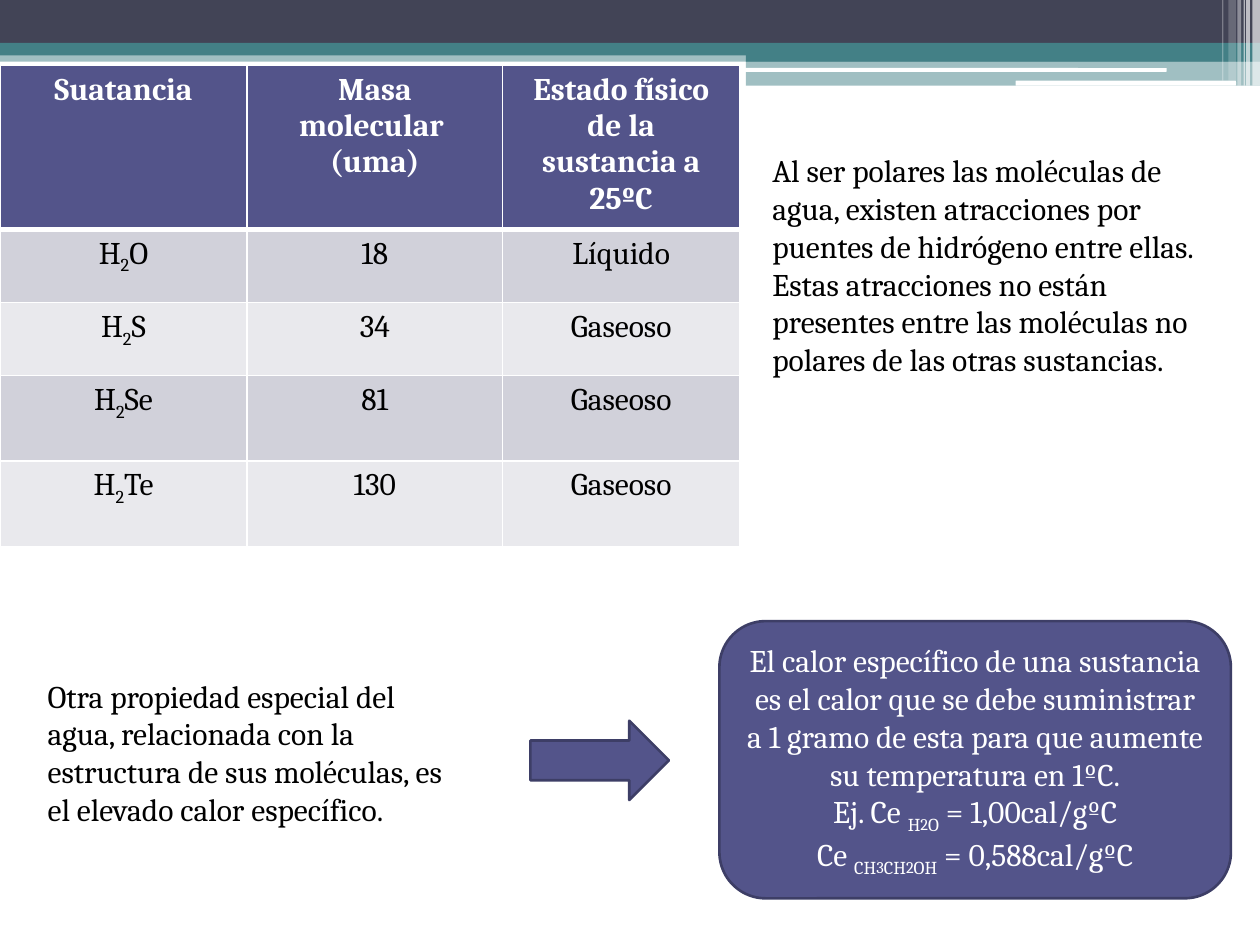
import itertools
import pptx
import pptx.dml.color
import pptx.enum.shapes
import pptx.enum.text
import pptx.oxml
import pptx.oxml.ns
import pptx.util
from pptx.util import Inches

SHAPES = pptx.enum.shapes.MSO_SHAPE
ALIGN = pptx.enum.text.PP_ALIGN
ANCHOR = pptx.enum.text.MSO_ANCHOR
INDIGO, OUTLINE, TEAL, SLATE = "53548A", "3D3E66", "438086", "424456"
WHITE, BLACK = "FFFFFF", "000000"

BANDS = [
    (0, 0.4, 10, 0.09, TEAL, 50),
    (0, 0, 10, 0.34, SLATE, 100),
    (0, 0.34, 10, 0.1, TEAL, 100),
    (5.92, 0.39, 4.08, 0.1, TEAL, 100),
    (5.92, 0.48, 4.08, 0.2, TEAL, 50),
]
HIGHLIGHTS = [(5.91, 0.54, 3.35, 0.03), (8.06, 0.64, 1.75, 0.04)]
STRIPES = [
    (9.94, 0.06, 0.68, 65),
    (9.89, 0.03, 0.68, 65),
    (9.87, 0.01, 0.68, 60),
    (9.82, 0.03, 0.68, 40),
    (9.75, 0.06, 0.64, 20),
    (9.7, 0.01, 0.64, 30),
]
SUBSTANCES = [
    ("Suatancia", "Masa molecular  (uma)", "Estado físico de la sustancia a 25ºC"),
    ("H_2_O", "18", "Líquido"),
    ("H_2_S", "34", "Gaseoso"),
    ("H_2_Se", "81", "Gaseoso"),
    ("H_2_Te", "130", "Gaseoso"),
]
COLUMN_WIDTHS = (1.96, 2.03, 1.88)
ROW_HEIGHTS = (1.24, 0.58, 0.58, 0.68, 0.68)
POLARITY = (
    "Al ser polares las moléculas de agua, existen atracciones por puentes de "
    "hidrógeno entre ellas. Estas atracciones no están presentes entre las "
    "moléculas no polares de las otras sustancias."
)
PROPERTY = (
    "Otra propiedad especial del agua, relacionada con la estructura de sus "
    "moléculas, es el elevado calor específico."
)
SPECIFIC_HEAT = (
    "El calor específico de una sustancia es el calor que se debe suministrar a "
    "1 gramo de esta para que aumente su temperatura en 1ºC.\n"
    "Ej. Ce _H2O_ = 1,00cal/gºC\n"
    "Ce _CH3CH2OH_ = 0,588cal/gºC"
)


def rgb(color):
    return pptx.dml.color.RGBColor.from_string(color)


def write(frame, text, color=BLACK, bold=False, align=ALIGN.LEFT, digit_size=18, before=0):
    frame.word_wrap = True
    for number, line in enumerate(text.split("\n")):
        paragraph = frame.paragraphs[0] if number == 0 else frame.add_paragraph()
        paragraph.alignment = align
        paragraph.space_before = pptx.util.Pt(before)
        for index, part in enumerate(line.split("_")):
            lowered = index % 2 == 1
            pieces = [(False, part)]
            if lowered:
                pieces = [(key, "".join(group)) for key, group in itertools.groupby(part, str.isdigit)]
            for is_digit, piece in pieces:
                if not piece:
                    continue
                run = paragraph.add_run()
                run.text = piece
                run.font.name = "Cambria"
                run.font.size = pptx.util.Pt(digit_size if is_digit else 18)
                run.font.bold = bold
                run.font.color.rgb = rgb(color)
                if lowered:
                    run._r.get_or_add_rPr().set("baseline", "-25000")


def add_block(slide, kind, left, top, width, height, fill, opacity=100, outline=None):
    block = slide.shapes.add_shape(kind, Inches(left), Inches(top), Inches(width), Inches(height))
    block.shadow.inherit = False
    block.fill.solid()
    block.fill.fore_color.rgb = rgb(fill)
    if opacity < 100:
        tint = block._element.spPr.find(".//" + pptx.oxml.ns.qn("a:srgbClr"))
        alpha = pptx.oxml.parse_xml(f'<a:alpha {pptx.oxml.ns.nsdecls("a")} val="{opacity * 1000}"/>')
        tint.append(alpha)
    if outline:
        block.line.color.rgb = rgb(outline)
        block.line.width = pptx.util.Pt(1.5)
    else:
        block.line.fill.background()
    return block


def add_text(slide, left, top, width, height, text, **style):
    box = slide.shapes.add_textbox(Inches(left), Inches(top), Inches(width), Inches(height))
    write(box.text_frame, text, **style)
    return box


def add_borders(cell, bottom_width):
    properties = cell._tc.get_or_add_tcPr()
    for side, points in (("L", 1), ("R", 1), ("T", 1), ("B", bottom_width)):
        properties.append(pptx.oxml.parse_xml(
            f'<a:ln{side} {pptx.oxml.ns.nsdecls("a")} w="{pptx.util.Pt(points)}">'
            f'<a:solidFill><a:srgbClr val="{WHITE}"/></a:solidFill></a:ln{side}>'
        ))


def add_substance_table(slide):
    table = slide.shapes.add_table(
        len(SUBSTANCES), len(COLUMN_WIDTHS), Inches(0), Inches(0.52),
        Inches(sum(COLUMN_WIDTHS)), Inches(sum(ROW_HEIGHTS)),
    ).table
    for column, width in zip(table.columns, COLUMN_WIDTHS):
        column.width = Inches(width)
    for index, (row, height, values) in enumerate(zip(table.rows, ROW_HEIGHTS, SUBSTANCES)):
        row.height = Inches(height)
        header = index == 0
        fill = INDIGO if header else ("E9E9ED", "D1D1DA")[index % 2]
        for cell, value in zip(row.cells, values):
            cell.margin_left = cell.margin_right = Inches(0.13)
            cell.margin_top = cell.margin_bottom = Inches(0.05)
            add_borders(cell, 3 if header else 1)
            cell.fill.solid()
            cell.fill.fore_color.rgb = rgb(fill)
            write(cell.text_frame, value, color=WHITE if header else BLACK,
                  bold=header, align=ALIGN.CENTER)


def add_header_decoration(slide):
    for left, top, width, height, color, opacity in BANDS:
        add_block(slide, SHAPES.RECTANGLE, left, top, width, height, color, opacity)
    for place in HIGHLIGHTS:
        add_block(slide, SHAPES.ROUNDED_RECTANGLE, *place, WHITE)
    for left, width, height, opacity in STRIPES:
        add_block(slide, SHAPES.RECTANGLE, left, 0, width, height, WHITE, opacity)


def main():
    deck = pptx.Presentation()
    deck.slide_width, deck.slide_height = Inches(10), Inches(7.5)
    slide = deck.slides.add_slide(deck.slide_layouts[6])
    add_header_decoration(slide)
    polarity = add_text(slide, 6.02, 1.15, 3.78, 2.52, POLARITY, before=3)
    polarity.text_frame.margin_left = Inches(0.11)
    add_substance_table(slide)
    definition = add_block(slide, SHAPES.ROUNDED_RECTANGLE, 5.71, 4.93, 4.06, 2.2, INDIGO, outline=OUTLINE)
    definition.text_frame.vertical_anchor = ANCHOR.MIDDLE
    write(definition.text_frame, SPECIFIC_HEAT, color=WHITE, align=ALIGN.CENTER, digit_size=16)
    add_block(slide, SHAPES.RIGHT_ARROW, 4.21, 5.72, 1.1, 0.63, INDIGO, outline=OUTLINE)
    add_text(slide, 0.28, 5.32, 3.46, 1.31, PROPERTY)
    deck.save("out.pptx")


if __name__ == "__main__":
    main()
